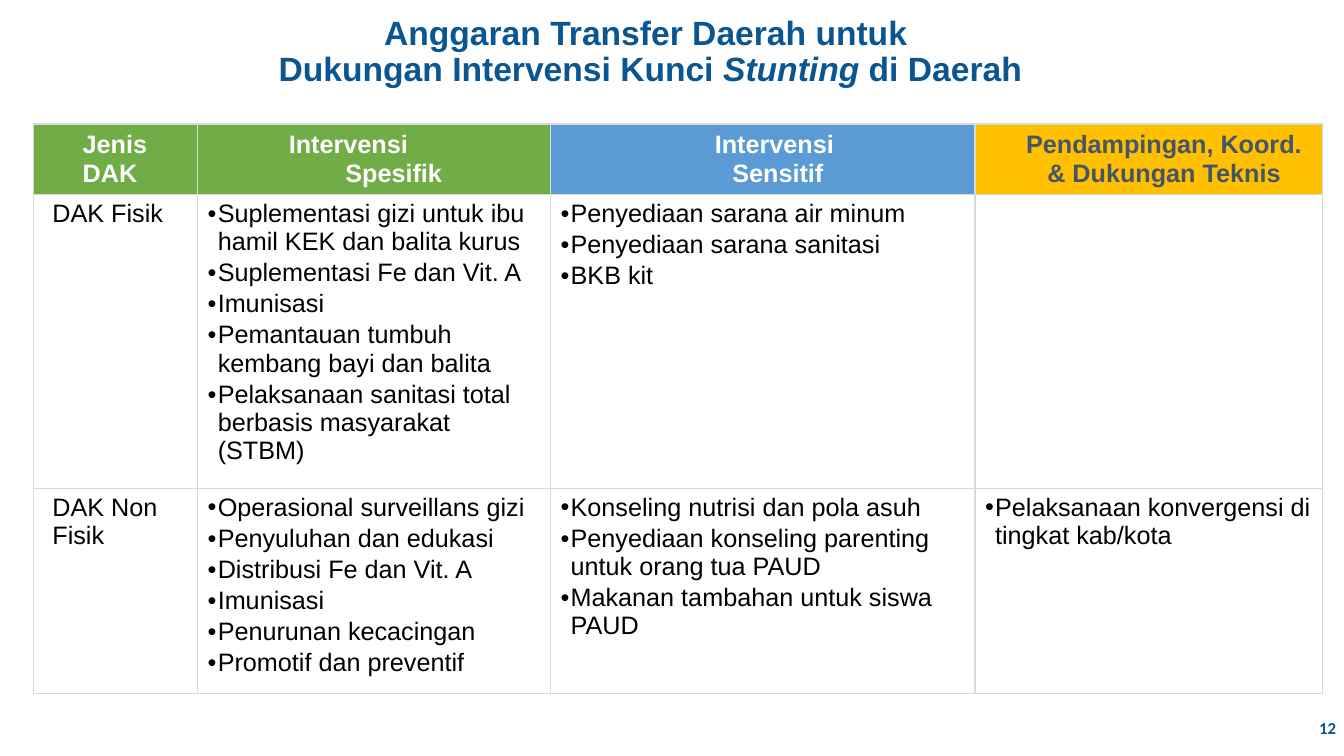
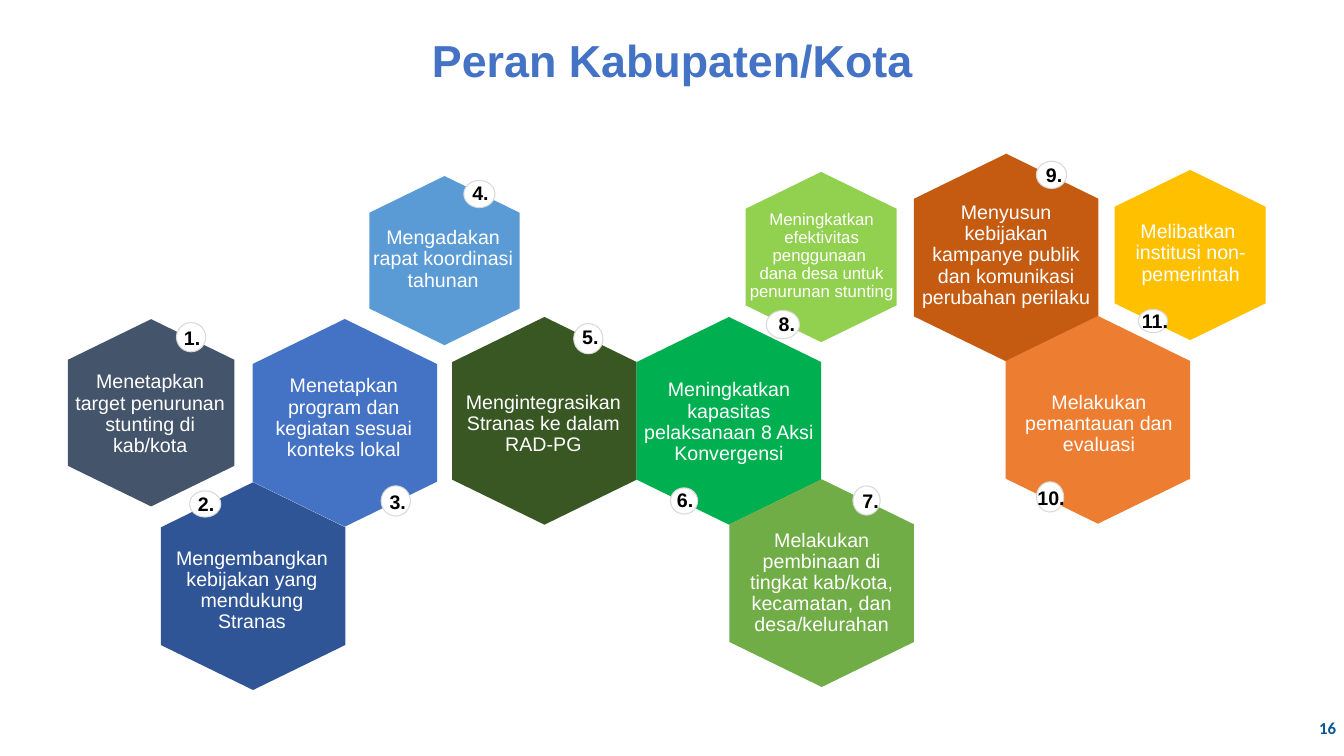
from pptx import Presentation
from pptx.dml.color import RGBColor
from pptx.enum.shapes import MSO_SHAPE
from pptx.enum.text import MSO_ANCHOR, MSO_AUTO_SIZE, PP_ALIGN
from pptx.oxml.ns import qn
from pptx.util import Inches, Pt
from lxml import etree

HEX, OVAL = MSO_SHAPE.HEXAGON, MSO_SHAPE.OVAL
TOP, MID = MSO_ANCHOR.TOP, MSO_ANCHOR.MIDDLE
LEFT, MIDST, RIGHT = PP_ALIGN.LEFT, PP_ALIGN.CENTER, PP_ALIGN.RIGHT
NAVY, BLUE, SLATE = "095693", "4472C4", "44546A"
GREEN, SKY, GOLD = "70AD47", "5B9BD5", "FFC000"
WHITE, BLACK, GRAY = "FFFFFF", "000000", "D9D9D9"


def rgb(code):
    return RGBColor.from_string(code)


def style(frame, size, color, bold=False, align=MIDST, space=None, face="Arial"):
    frame.word_wrap = True
    for para in frame.paragraphs:
        para.alignment = align
        para.line_spacing = space
        for run in para.runs:
            font = run.font
            font.name, font.size, font.bold = face, Pt(size), bold
            font.color.rgb = rgb(color)


deck = Presentation()
deck.slide_width, deck.slide_height = Inches(13.33), Inches(7.5)

# Shared parts: title and page number
pages = [
    ("Anggaran Transfer Daerah untuk \vDukungan Intervensi Kunci ", "12",
     (1.08, 0.02, 10.74, 1), 24, NAVY, MID),
    ("Peran Kabupaten/Kota", "16", (1.85, 0.33, 9.64, 0.58), 32, BLUE, TOP),
]
slides = []
for text, num, place, size, color, anchor in pages:
    slide = deck.slides.add_slide(deck.slide_layouts[5])
    slides.append(slide)
    title = slide.shapes.title
    title.left, title.top, title.width, title.height = map(Inches, place)
    frame = title.text_frame
    frame.auto_size = MSO_AUTO_SIZE.NONE
    frame.vertical_anchor = anchor
    frame.text = text
    style(frame, size, color, True, MIDST, 0.9)
    box = slide.shapes.add_textbox(*map(Inches, (12.9, 7.02, 0.45, 0.4)))
    box.text_frame.text = num
    box.text_frame.vertical_anchor = MID
    style(box.text_frame, 12, NAVY, True, RIGHT, face="Calibri")
funds, roles = slides

# Italic word in the first title
frame = funds.shapes.title.text_frame
for text in ("Stunting", " di Daerah"):
    frame.paragraphs[0].add_run().text = text
style(frame, 24, NAVY, True, MIDST, 0.9)
frame.paragraphs[0].runs[-2].font.italic = True

# Funding table: head cells hold text, fill, colour, alignment, indent
heads = [
    ("Jenis DAK", GREEN, WHITE, LEFT, 0.39),
    ("Intervensi\nSpesifik", GREEN, WHITE, MIDST, 0.39),
    ("Intervensi \nSensitif", SKY, WHITE, MIDST, 0.3),
    ("Pendampingan, Koord. & Dukungan Teknis", GOLD, SLATE, MIDST, 0.3),
]
body = [
    ["DAK Fisik",
     "Suplementasi gizi untuk ibu hamil KEK dan balita kurus\n"
     "Suplementasi Fe dan Vit. A\nImunisasi\n"
     "Pemantauan tumbuh kembang bayi dan balita\n"
     "Pelaksanaan sanitasi total berbasis masyarakat (STBM)",
     "Penyediaan sarana air minum\nPenyediaan sarana sanitasi\nBKB kit",
     ""],
    ["DAK Non Fisik",
     "Operasional surveillans gizi\nPenyuluhan dan edukasi\n"
     "Distribusi Fe dan Vit. A\nImunisasi\nPenurunan kecacingan\n"
     "Promotif dan preventif",
     "Konseling nutrisi dan pola asuh\n"
     "Penyediaan konseling parenting untuk orang tua PAUD\n"
     "Makanan tambahan untuk siswa PAUD",
     "Pelaksanaan konvergensi di tingkat kab/kota"],
]
grid = funds.shapes.add_table(3, 4, *map(Inches, (0.33, 1.23, 12.79, 5.65)))
table = grid.table
table.first_row = table.horz_banding = False
for col, wide in zip(table.columns, (1.63, 3.5, 4.21, 3.45)):
    col.width = Inches(wide)
# Rows grow with their text
for row, high in zip(table.rows, (0.3, 0.68, 0.68)):
    row.height = Inches(high)
grid.height = Inches(5.65)

rows = [heads]
for texts in body:
    rows.append([(text, WHITE, BLACK, LEFT, 0.1 if c else 0.09)
                 for c, text in enumerate(texts)])
for r, line in enumerate(rows):
    for c, (text, fill, color, align, indent) in enumerate(line):
        cell = table.cell(r, c)
        props = cell._tc.get_or_add_tcPr()
        for side in ("a:lnL", "a:lnR", "a:lnT", "a:lnB"):
            edge = etree.SubElement(props, qn(side), w=str(Pt(1)))
            paint = etree.SubElement(edge, qn("a:solidFill"))
            etree.SubElement(paint, qn("a:srgbClr"), val=GRAY)
        cell.fill.solid()
        cell.fill.fore_color.rgb = rgb(fill)
        cell.vertical_anchor = TOP if r else MID
        if not text:
            continue
        frame = cell.text_frame
        frame.text = text
        for n, para in enumerate(frame.paragraphs):
            ppr = para._p.get_or_add_pPr()
            ppr.set("marL", str(Inches(indent)))
            ppr.set("marR", "0")
            ppr.set("indent", "0")
            if r and c:
                ppr.set("indent", str(-Inches(indent)))
                etree.SubElement(ppr, qn("a:buFont"), typeface="Arial")
                etree.SubElement(ppr, qn("a:buChar"), char="•")
                if n:
                    para.space_before = Pt(2)
        style(frame, 18, color, not r, align)
# "Intervensi" stands left of "Spesifik"
first = table.cell(0, 1).text_frame.paragraphs[0]
first._p.get_or_add_pPr().set("marR", str(Inches(0.9)))

# Roles: colour, hexagon (left, top, height), badge, label, number place, text
steps = [
    (SLATE, (0.57, 3.27, 1.65), (1.75, 3.2, 0.29, 0.29),
     (0.72, 3.69, 1.54, 0.85), (1.73, 3.26),
     "Menetapkan target penurunan stunting di kab/kota"),
    ("2F5597", (1.48, 4.9, 1.83), (1.88, 4.87, 0.31, 0.26),
     (1.73, 5.44, 1.54, 0.85), (1.87, 4.91),
     "Mengembangkan kebijakan yang mendukung Stranas"),
    (BLUE, (2.39, 3.28, 1.83), (3.78, 4.82, 0.29, 0.3),
     (2.64, 3.73, 1.54, 0.85), (3.77, 4.89),
     "Menetapkan program dan kegiatan sesuai konteks lokal"),
    (SKY, (3.57, 1.84, 1.49), (4.6, 1.79, 0.31, 0.27),
     (3.65, 2.26, 1.49, 0.64), (4.59, 1.82),
     "Mengadakan rapat koordinasi tahunan"),
    ("385723", (4.37, 3.26, 1.83), (5.69, 3.21, 0.29, 0.3),
     (4.54, 3.89, 1.7, 0.64), (5.68, 3.25),
     "Mengintegrasikan Stranas ke dalam RAD-PG"),
    ("00B050", (6.2, 3.26, 1.83), (6.65, 4.84, 0.27, 0.26),
     (6.38, 3.77, 1.7, 0.85), (6.62, 4.87),
     "Meningkatkan kapasitas pelaksanaan 8 Aksi Konvergensi"),
    (GREEN, (7.12, 4.87, 1.83), (8.46, 4.82, 0.27, 0.29),
     (7.3, 5.26, 1.7, 1.06), (8.46, 4.88),
     "Melakukan pembinaan di tingkat kab/kota, kecamatan, dan desa/kelurahan"),
    ("92D050", (7.3, 1.8, 1.5), (7.6, 3.08, 0.33, 0.28),
     (7.3, 2.09, 1.7, 0.91), (7.63, 3.12),
     "Meningkatkan efektivitas penggunaan \n"
     "dana desa untuk penurunan stunting"),
    ("C55A11", (8.95, 1.64, 1.83), (10.28, 1.6, 0.3, 0.27),
     (9.13, 2.01, 1.7, 1.06), (10.28, 1.64),
     "Menyusun kebijakan kampanye publik dan komunikasi perubahan perilaku"),
    ("ED7D31", (9.86, 3.25, 1.83), (10.28, 4.78, 0.27, 0.3),
     (10.05, 3.89, 1.7, 0.64), (10.25, 4.85),
     "Melakukan pemantauan dan evaluasi"),
    (GOLD, (10.96, 1.78, 1.5), (11.29, 3.07, 0.29, 0.23),
     (10.96, 2.2, 1.7, 0.64), (11.28, 3.09),
     "Melibatkan \ninstitusi non-pemerintah"),
]
shapes = roles.shapes
for n, (color, (x, y, high), badge, label, spot, text) in enumerate(steps, 1):
    cell = shapes.add_shape(HEX, *map(Inches, (x, y, high * 1.126, high)))
    cell.rotation = 270
    cell.adjustments[0] = 0.244
    dot = shapes.add_shape(OVAL, *map(Inches, badge))
    for shape, fill in ((cell, color), (dot, WHITE)):
        shape.shadow.inherit = False
        shape.fill.solid()
        shape.fill.fore_color.rgb = rgb(fill)
    cell.line.fill.background()
    dot.line.color.rgb = rgb(GRAY)
    dot.line.width = Pt(0.75)

    # Label and number
    size = 12 if n == 8 else 14
    for place, words, points, ink, bold in (
            (label, text, size, WHITE, False),
            ((*spot, 0.35, 0.21), f"{n}.", 14, BLACK, True)):
        frame = shapes.add_textbox(*map(Inches, place)).text_frame
        frame.margin_left = frame.margin_right = 0
        frame.margin_top = frame.margin_bottom = 0
        frame.text = words
        style(frame, points, ink, bold, MIDST, 0.9)

deck.save("out.pptx")
